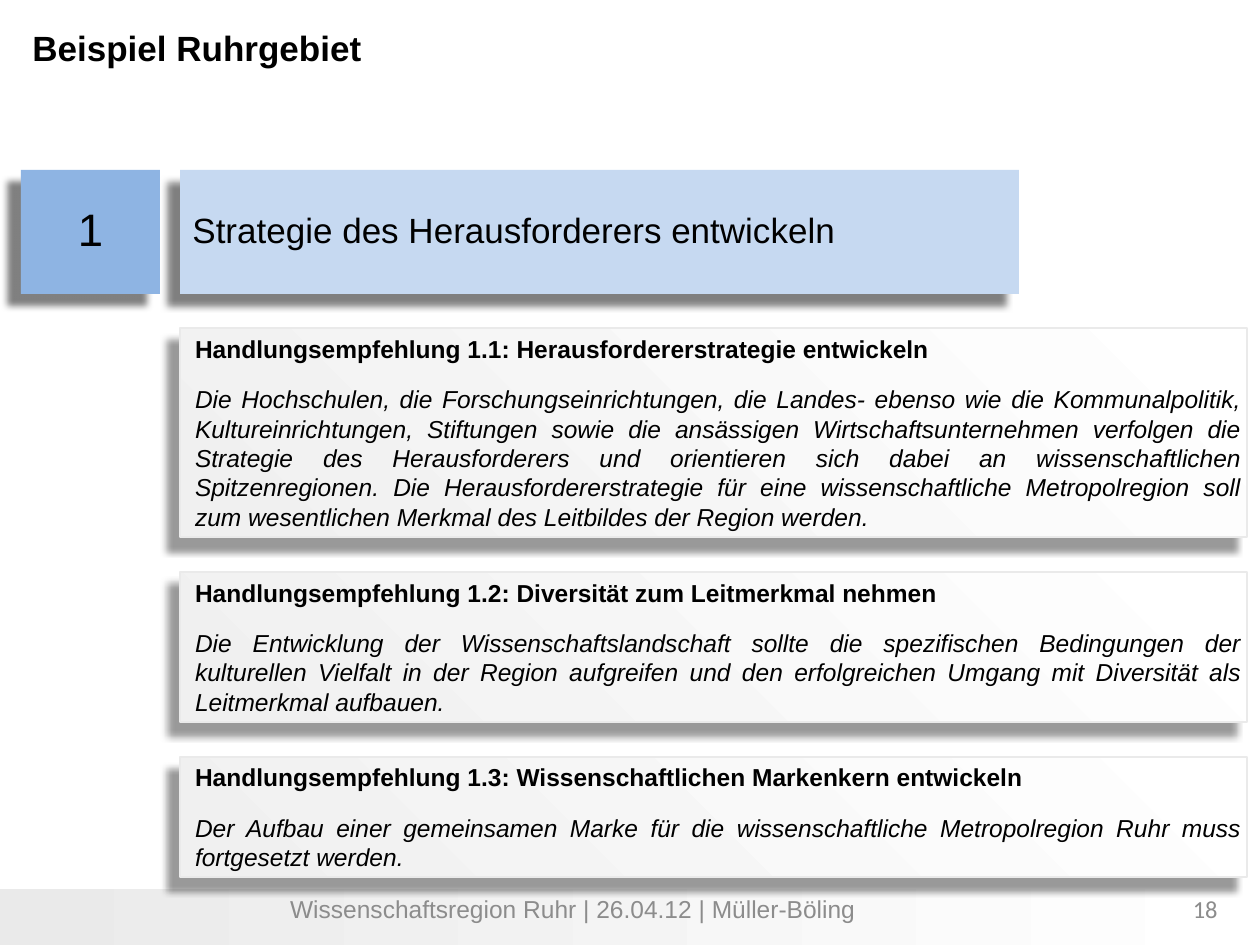
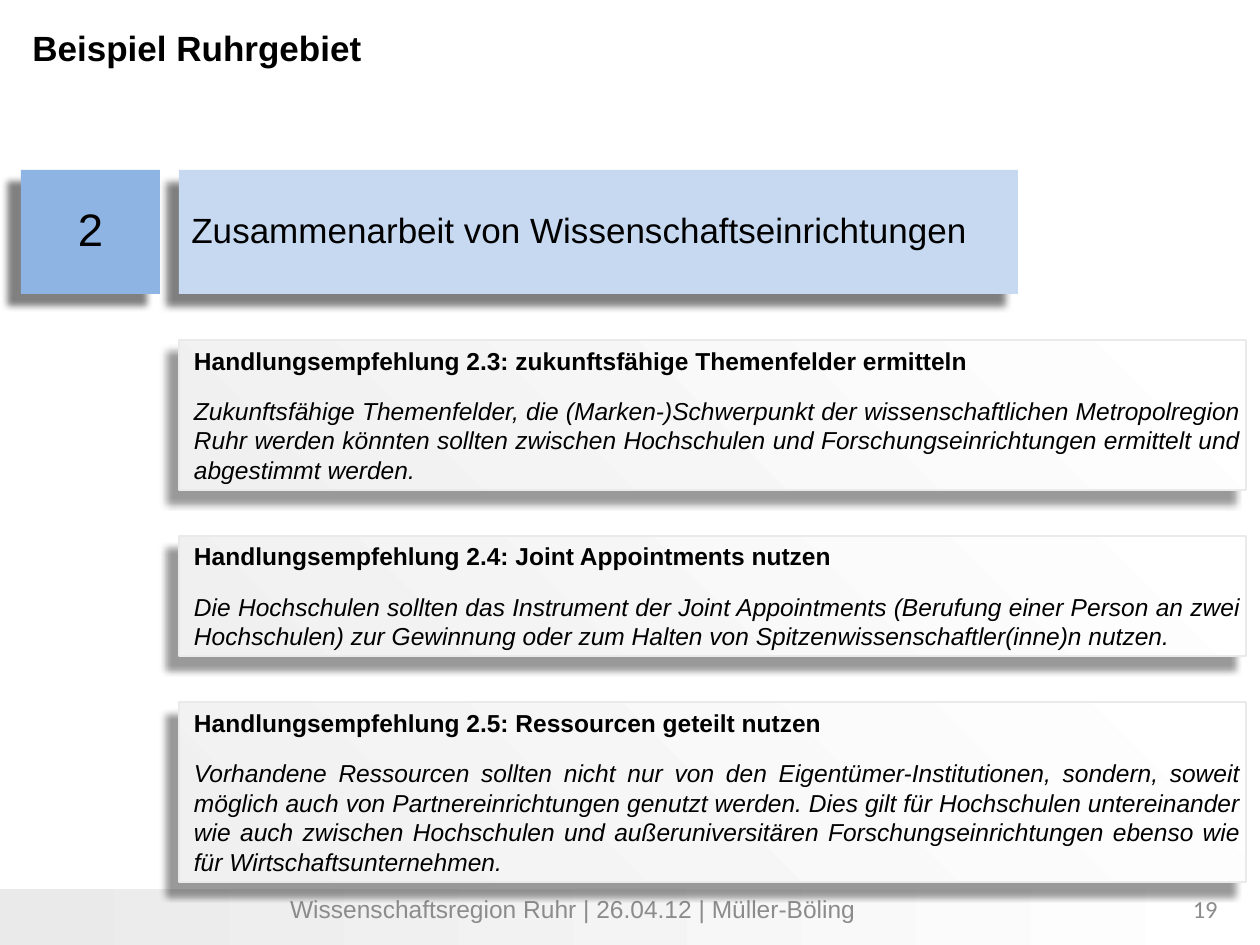
from dataclasses import dataclass

from lxml.etree import SubElement
from pptx import Presentation
from pptx.dml.color import RGBColor
from pptx.enum.shapes import MSO_SHAPE
from pptx.enum.text import MSO_ANCHOR, MSO_AUTO_SIZE, PP_ALIGN
from pptx.oxml.ns import qn
from pptx.shapes.autoshape import Shape
from pptx.slide import Slide
from pptx.text.text import _Paragraph as Paragraph
from pptx.util import Emu, Pt

PIXELS_PER_INCH = 126
SLIDE_WIDTH, SLIDE_HEIGHT = 1260, 945

BLACK = RGBColor(0x00, 0x00, 0x00)
WHITE = RGBColor(0xFF, 0xFF, 0xFF)
NUMBER_BLUE = RGBColor(0x8E, 0xB4, 0xE3)
HEADING_BLUE = RGBColor(0xC6, 0xD9, 0xF1)
CARD_GREY = RGBColor(0xF0, 0xF0, 0xF0)
EDGE_GREY = RGBColor(0xEA, 0xEA, 0xEA)
FOOTER_GREY = RGBColor(0x8C, 0x8C, 0x8C)

TITLE = "Beispiel Ruhrgebiet"
FOOTER = "Wissenschaftsregion Ruhr | 26.04.12 | Müller-Böling"
HEADING_TOP, HEADING_HEIGHT = 170, 124
CARD_WIDTH = 1067


@dataclass(frozen=True)
class Box:
    left: int
    top: int
    width: int
    height: int


@dataclass(frozen=True)
class TextStyle:
    size: int
    color: RGBColor = BLACK
    font: str = "Arial"
    bold: bool = False
    italic: bool = False
    align: PP_ALIGN = PP_ALIGN.LEFT


@dataclass(frozen=True)
class Shadow:
    opacity: int
    direction: int


@dataclass(frozen=True)
class Recommendation:
    label: str
    body: str
    height: int


@dataclass(frozen=True)
class Section:
    number: int
    page: int
    heading: str
    column_left: int
    cards_top: int
    card_gap: int
    recommendations: tuple[Recommendation, ...]


TITLE_STYLE = TextStyle(20, bold=True)
HEADING_STYLE = TextStyle(20)
NUMBER_STYLE = TextStyle(26, align=PP_ALIGN.CENTER)
FOOTER_STYLE = TextStyle(14, FOOTER_GREY, align=PP_ALIGN.CENTER)
PAGE_STYLE = TextStyle(14, FOOTER_GREY, "Calibri", align=PP_ALIGN.RIGHT)
LABEL_STYLE = TextStyle(14, bold=True, align=PP_ALIGN.JUSTIFY)
BODY_STYLE = TextStyle(14, italic=True, align=PP_ALIGN.JUSTIFY)

HEADING_SHADOW = Shadow(opacity=49, direction=140)
CARD_SHADOW = Shadow(opacity=40, direction=135)

SECTIONS = (
    Section(1, 18, "Strategie des Herausforderers entwickeln", 180, 328, 35, (
        Recommendation(
            "Handlungsempfehlung 1.1: Herausfordererstrategie entwickeln",
            "Die Hochschulen, die Forschungseinrichtungen, die Landes- ebenso wie die "
            "Kommunalpolitik, Kultureinrichtungen, Stiftungen sowie die ansässigen "
            "Wirtschaftsunternehmen verfolgen die Strategie des Herausforderers und "
            "orientieren sich dabei an wissenschaftlichen Spitzenregionen. Die "
            "Herausfordererstrategie für eine wissenschaftliche Metropolregion soll zum "
            "wesentlichen Merkmal des Leitbildes der Region werden.", 209),
        Recommendation(
            "Handlungsempfehlung 1.2: Diversität zum Leitmerkmal nehmen",
            "Die Entwicklung der Wissenschaftslandschaft sollte die spezifischen "
            "Bedingungen der kulturellen Vielfalt in der Region aufgreifen und den "
            "erfolgreichen Umgang mit Diversität als Leitmerkmal aufbauen.", 150),
        Recommendation(
            "Handlungsempfehlung 1.3: Wissenschaftlichen Markenkern entwickeln",
            "Der Aufbau einer gemeinsamen Marke für die wissenschaftliche "
            "Metropolregion Ruhr muss fortgesetzt werden.", 120),
    )),
    Section(2, 19, "Zusammenarbeit von Wissenschaftseinrichtungen", 179, 340, 46, (
        Recommendation(
            "Handlungsempfehlung 2.3: zukunftsfähige Themenfelder ermitteln",
            "Zukunftsfähige Themenfelder, die (Marken-)Schwerpunkt der "
            "wissenschaftlichen Metropolregion Ruhr werden könnten sollten zwischen "
            "Hochschulen und Forschungseinrichtungen ermittelt und abgestimmt werden.", 150),
        Recommendation(
            "Handlungsempfehlung 2.4: Joint Appointments nutzen",
            "Die Hochschulen sollten das Instrument der Joint Appointments (Berufung "
            "einer Person an zwei Hochschulen) zur Gewinnung oder zum Halten von "
            "Spitzenwissenschaftler(inne)n nutzen.", 120),
        Recommendation(
            "Handlungsempfehlung 2.5: Ressourcen geteilt nutzen",
            "Vorhandene Ressourcen sollten nicht nur von den Eigentümer-Institutionen, "
            "sondern, soweit möglich auch von Partnereinrichtungen genutzt werden. Dies "
            "gilt für Hochschulen untereinander wie auch zwischen Hochschulen und "
            "außeruniversitären Forschungseinrichtungen ebenso wie für "
            "Wirtschaftsunternehmen.", 180),
    )),
)


def px(length: int) -> Emu:
    return Emu(round(length * 914400 / PIXELS_PER_INCH))


def place(box: Box) -> tuple[Emu, Emu, Emu, Emu]:
    return px(box.left), px(box.top), px(box.width), px(box.height)


def write(paragraph: Paragraph, text: str, style: TextStyle) -> None:
    paragraph.text = text
    paragraph.alignment = style.align
    font = paragraph.font
    font.name = style.font
    font.size = Pt(style.size)
    font.bold = style.bold
    font.italic = style.italic
    font.color.rgb = style.color


def add_text(slide: Slide, box: Box, text: str, style: TextStyle) -> Paragraph:
    frame = slide.shapes.add_textbox(*place(box)).text_frame
    frame.word_wrap = True
    write(frame.paragraphs[0], text, style)
    return frame.paragraphs[0]


def add_rectangle(slide: Slide, box: Box) -> Shape:
    shape = slide.shapes.add_shape(MSO_SHAPE.RECTANGLE, *place(box))
    shape.shadow.inherit = False
    shape.line.fill.background()
    return shape


def fill_gradient(shape: Shape, start: RGBColor, end: RGBColor, angle: int) -> None:
    shape.fill.gradient()
    shape.fill.gradient_angle = angle
    for stop, color, position in zip(shape.fill.gradient_stops, (start, end), (0, 1)):
        stop.color.rgb = color
        stop.position = position


def cast_shadow(shape: Shape, shadow: Shadow) -> None:
    effects = shape._element.spPr.find(qn("a:effectLst"))
    outer = SubElement(effects, qn("a:outerShdw"), blurRad=str(Pt(4)), dist=str(Pt(10)),
                       dir=str(shadow.direction * 60000), algn="tr", rotWithShape="0")
    color = SubElement(outer, qn("a:srgbClr"), val=str(BLACK))
    SubElement(color, qn("a:alpha"), val=str(shadow.opacity * 1000))


def add_heading_block(slide: Slide, left: int, width: int, color: RGBColor,
                      text: str, style: TextStyle) -> None:
    block = add_rectangle(slide, Box(left, HEADING_TOP, width, HEADING_HEIGHT))
    block.fill.solid()
    block.fill.fore_color.rgb = color
    cast_shadow(block, HEADING_SHADOW)
    frame = block.text_frame
    frame.word_wrap = True
    frame.vertical_anchor = MSO_ANCHOR.MIDDLE
    write(frame.paragraphs[0], text, style)
    frame.paragraphs[0].line_spacing = 0.9


def add_card(slide: Slide, box: Box, recommendation: Recommendation) -> None:
    card = add_rectangle(slide, box)
    fill_gradient(card, CARD_GREY, WHITE, 45)
    card.line.color.rgb = EDGE_GREY
    card.line.width = Pt(1.5)
    cast_shadow(card, CARD_SHADOW)
    frame = card.text_frame
    frame.word_wrap = True
    frame.auto_size = MSO_AUTO_SIZE.SHAPE_TO_FIT_TEXT
    frame.vertical_anchor = MSO_ANCHOR.MIDDLE
    frame.margin_left = px(15)
    frame.margin_top = frame.margin_right = frame.margin_bottom = px(5)
    write(frame.paragraphs[0], recommendation.label, LABEL_STYLE)
    write(frame.add_paragraph(), recommendation.body, BODY_STYLE)
    for paragraph in frame.paragraphs:
        paragraph.space_after = Pt(12)


def add_frame(slide: Slide, page: int) -> None:
    """Draw the footer band, title, footer and page number shared by all slides."""
    band = add_rectangle(slide, Box(0, 889, SLIDE_WIDTH, 56))
    fill_gradient(band, WHITE, EDGE_GREY, 180)
    title = add_text(slide, Box(20, 20, 945, 88), TITLE, TITLE_STYLE)
    title.space_before = Pt(4)
    add_text(slide, Box(20, 888, 1106, 66), FOOTER, FOOTER_STYLE)
    add_text(slide, Box(936, 888, 294, 66), str(page), PAGE_STYLE)


def add_section(slide: Slide, section: Section) -> None:
    add_frame(slide, section.page)
    add_heading_block(slide, section.column_left, 839, HEADING_BLUE,
                      section.heading, HEADING_STYLE)
    add_heading_block(slide, 21, 139, NUMBER_BLUE, str(section.number), NUMBER_STYLE)
    top = section.cards_top
    for recommendation in section.recommendations:
        box = Box(section.column_left, top, CARD_WIDTH, recommendation.height)
        add_card(slide, box, recommendation)
        top += recommendation.height + section.card_gap


def main() -> None:
    presentation = Presentation()
    presentation.slide_width = px(SLIDE_WIDTH)
    presentation.slide_height = px(SLIDE_HEIGHT)
    blank_layout = presentation.slide_layouts[6]
    for section in SECTIONS:
        add_section(presentation.slides.add_slide(blank_layout), section)
    presentation.save("out.pptx")


if __name__ == "__main__":
    main()
